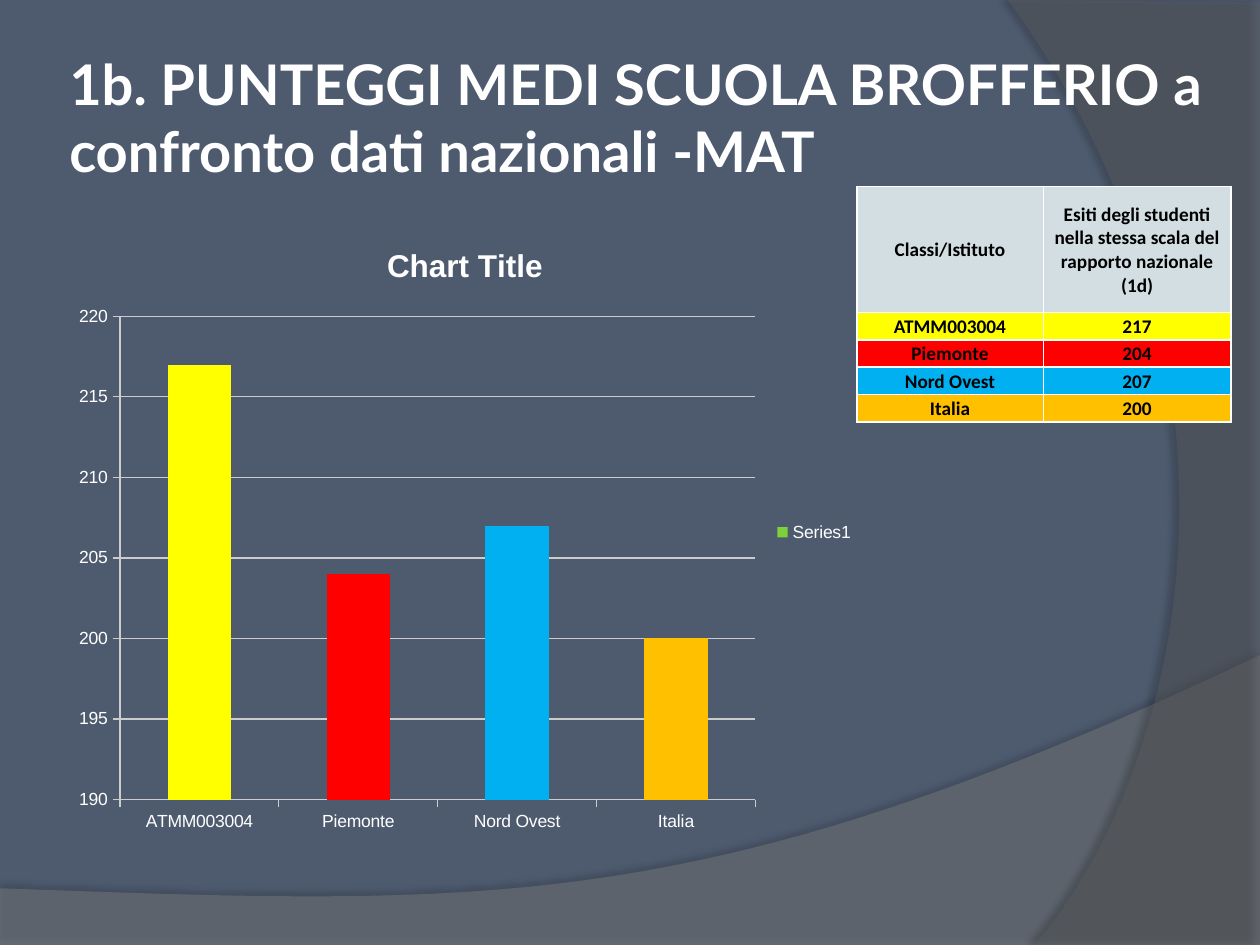
from lxml.etree import SubElement as Sub
from pptx import Presentation
from pptx.chart.data import CategoryChartData as Data
from pptx.dml.color import RGBColor as RGB
from pptx.enum.chart import XL_CHART_TYPE as Kind, XL_LEGEND_POSITION as Side, XL_TICK_MARK as Tick
from pptx.enum.text import MSO_ANCHOR as Anchor, PP_ALIGN as Align
from pptx.oxml.ns import qn
from pptx.util import Inches, Pt

HUES = {
    "back": "4E5B6F", "wave": "7F7F7F", "arc": "5E5E5E", "white": "FFFFFF",
    "black": "000000", "head": "D3DEE2", "key": "7FD13B", "grid": "CCCCCC",
}
ROWS = [
    ("ATMM003004", 217, "FFFF00"),
    ("Piemonte", 204, "FF0000"),
    ("Nord Ovest", 207, "00B0F0"),
    ("Italia", 200, "FFC000"),
]
COLS, LINES = 200, 150
UNIT = Inches(10) / COLS


def span(*cells):
    return [round(n * UNIT) for n in cells]


def curve(a, b, c, d, steps=60):
    for i in range(1, steps + 1):
        t = i / steps
        s = 1 - t
        yield tuple(s**3 * p + 3 * s * s * t * q + 3 * s * t * t * r + t**3 * u
                    for p, q, r, u in zip(a, b, c, d))


deck = Presentation()
deck.slide_width, deck.slide_height = span(COLS, LINES)
slide = deck.slides.add_slide(deck.slide_layouts[6])
slide.background.fill.solid()
slide.background.fill.fore_color.rgb = RGB.from_string(HUES["back"])

wave = [(0, 141), (0, 150.2), (200, 150.2), (200, 104),
        *curve((200, 104), (111.8, 145.8), (78.2, 143.8), (0, 141))]
arc = [(200, 0.4), (200, 150), (164.2, 150),
       *curve((164.2, 150), (187, 123.8), (203.6, 60), (160, 0))]
for name, dots, clear, dark, gap, turn in [("wave", wave, 45, 35, 3.5, 270),
                                           ("arc", arc, 40, 45, 4, 180)]:
    pen = slide.shapes.build_freeform(*span(*dots[0]))
    pen.add_line_segments([span(*dot) for dot in dots[1:]], close=True)
    form = pen.convert_to_shape()
    form.shadow.inherit = False
    form.line.fill.background()
    form.fill.solid()
    form.fill.fore_color.rgb = RGB.from_string(HUES[name])
    tint = form.fill._xPr.find(qn("a:solidFill"))[0]
    Sub(tint, qn("a:alpha"), val=str(clear * 1000))
    glow = form.fill._xPr.find(qn("a:effectLst"))
    cast = Sub(glow, qn("a:outerShdw"), blurRad=str(Pt(4)), dist=str(Pt(gap)),
               dir=str(turn * 60000), algn="ctr", rotWithShape="0")
    Sub(Sub(cast, qn("a:srgbClr"), val=HUES["black"]), qn("a:alpha"), val=str(dark * 1000))

title = slide.shapes.add_textbox(*span(10, 6, 186.8, 25)).text_frame
title.word_wrap = True
title.vertical_anchor = Anchor.MIDDLE
title.margin_left, title.margin_right, title.margin_top, title.margin_bottom = span(1, 1, 1, 1)
title.text = "1b. PUNTEGGI MEDI SCUOLA BROFFERIO a confronto dati nazionali -MAT"
font = title.paragraphs[0].font
font.name, font.size, font.bold = "Lato", Pt(32), True
font.color.rgb = RGB.from_string(HUES["white"])

top = ("Classi/Istituto",
       "Esiti degli studenti\vnella stessa scala del\vrapporto nazionale (1d)", HUES["head"])
table = slide.shapes.add_table(len(ROWS) + 1, 2, *span(136, 29.6, 59.4, 37.4)).table
for col, wide in zip(table.columns, span(29.6, 29.8)):
    col.width = wide
for row, tall in zip(table.rows, span(20, *[4.35] * len(ROWS))):
    row.height = tall
for r, (*words, hue) in enumerate([top, *ROWS]):
    for c, word in enumerate(words):
        cell = table.cell(r, c)
        cell.margin_left, cell.margin_right, cell.margin_top, cell.margin_bottom = span(0.2, 0.2, 0.2, 0)
        cell.vertical_anchor = Anchor.MIDDLE
        for edge in "LRTB":
            rim = Sub(cell._tc.get_or_add_tcPr(), qn(f"a:ln{edge}"), w=str(Pt(1)))
            Sub(Sub(rim, qn("a:solidFill")), qn("a:srgbClr"), val=HUES["white"])
        cell.fill.solid()
        cell.fill.fore_color.rgb = RGB.from_string(hue)
        cell.text = str(word)
        para = cell.text_frame.paragraphs[0]
        para.alignment = Align.CENTER
        para.font.name, para.font.size, para.font.bold = "Calibri", Pt(11), True
        para.font.color.rgb = RGB.from_string(HUES["black"])

data = Data(number_format="0")
data.categories = [name for name, _, _ in ROWS]
data.add_series("Series1", [score for _, score, _ in ROWS])
chart = slide.shapes.add_chart(Kind.COLUMN_CLUSTERED, *span(10, 35, 127.6, 99), data).chart
chart.font.name, chart.font.size = "Arial", Pt(10)
chart.font.color.rgb = RGB.from_string(HUES["white"])
chart.has_title = True
chart.chart_title.include_in_layout = False
chart.chart_title.text_frame.text = "Chart Title"
font = chart.chart_title.text_frame.paragraphs[0].font
font.name, font.size, font.bold = "Arial", Pt(18), True
font.color.rgb = RGB.from_string(HUES["white"])
chart.has_legend = True
chart.legend.position = Side.RIGHT
chart.legend.include_in_layout = False

scale = chart.value_axis
scale.minimum_scale, scale.maximum_scale, scale.major_unit = 190, 220, 5
scale.has_major_gridlines = True
scale.tick_labels.number_format = "0"
scale.tick_labels.number_format_is_linked = False
for axis in (scale, chart.category_axis):
    axis.major_tick_mark, axis.minor_tick_mark = Tick.OUTSIDE, Tick.NONE
for part in (scale, scale.major_gridlines, chart.category_axis):
    part.format.line.width = Pt(0.75)
    part.format.line.color.rgb = RGB.from_string(HUES["grid"])

plot = chart.plots[0]
plot.gap_width, plot.vary_by_categories = 150, False
bars = plot.series[0]
bars.format.fill.solid()
bars.format.fill.fore_color.rgb = RGB.from_string(HUES["key"])
for i, (_, _, hue) in enumerate(ROWS):
    fill = bars.points[i].format.fill
    fill.solid()
    fill.fore_color.rgb = RGB.from_string(hue)

deck.save("out.pptx")
